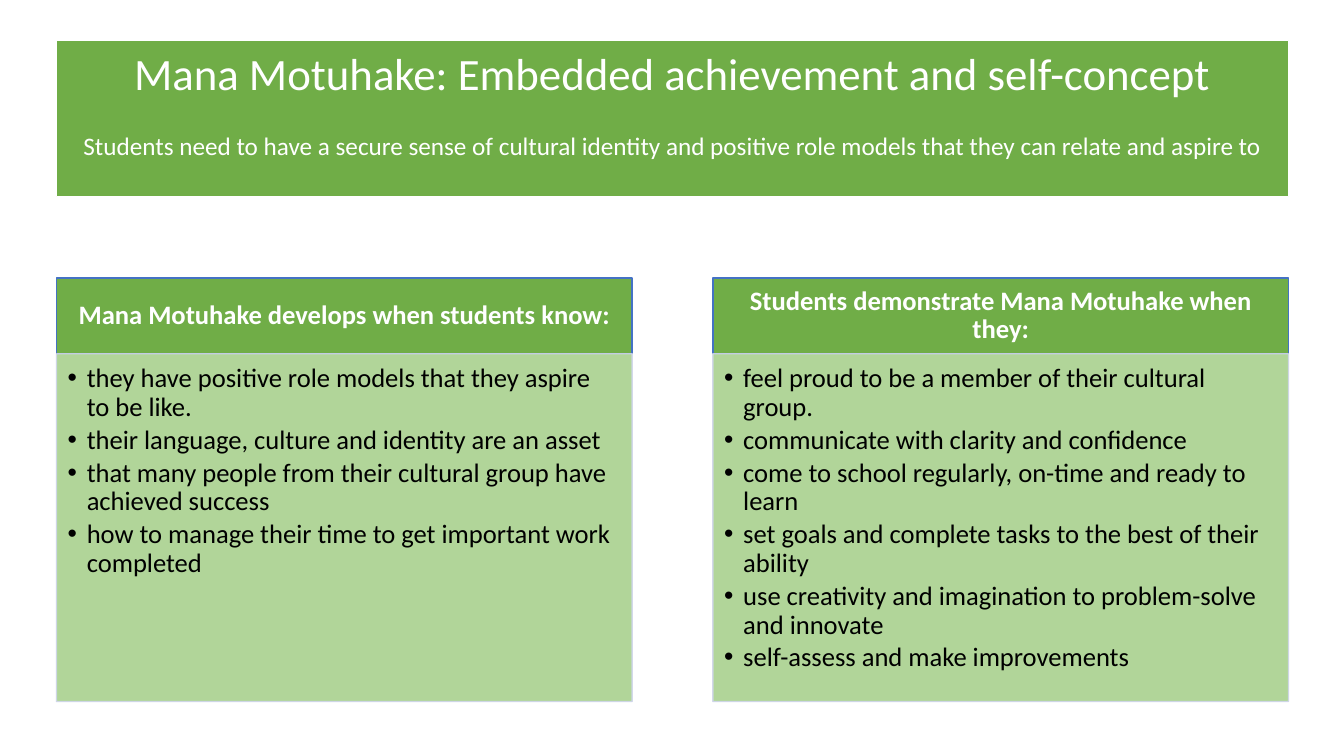
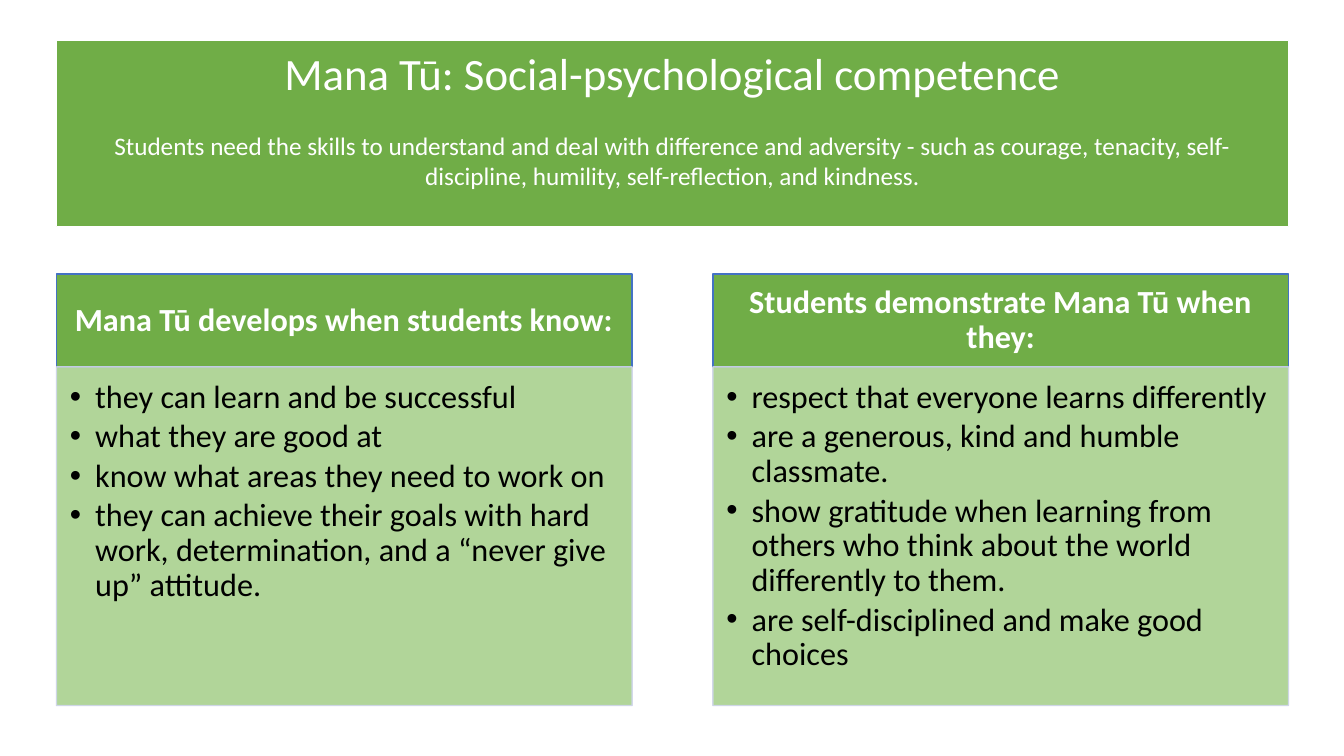
from dataclasses import dataclass

from lxml import etree
from pptx import Presentation
from pptx.dml.color import RGBColor
from pptx.enum import shapes, text
from pptx.oxml import ns
from pptx.util import Inches, Pt

# Content: panel sizes are in inches, text size in points
SLIDES = [
    {
        "title": "Mana Motuhake: Embedded achievement and self-concept",
        "subtitle": "Students need to have a secure sense of cultural identity and "
                    "positive role models that they can relate and aspire to",
        "band_height": 1.55,
        "top": 2.76, "head_height": 0.75, "body_height": 3.45,
        "size": 19, "indent": 0.19,
        "panels": [
            ("Mana Motuhake develops when students know:", [
                "they have positive role models that they aspire to be like.",
                "their language, culture and identity are an asset",
                "that many people from their cultural group have achieved success",
                "how to manage their time to get important work completed",
            ]),
            ("Students demonstrate Mana Motuhake when they:", [
                "feel proud to be a member of their cultural group.",
                "communicate with clarity and confidence",
                "come to school regularly, on-time and ready to learn",
                "set goals and complete tasks to the best of their ability",
                "use creativity and imagination to problem-solve and innovate",
                "self-assess and make improvements",
            ]),
        ],
    },
    {
        "title": "Mana Tū: Social-psychological competence",
        "subtitle": "Students need the skills to understand and deal with difference "
                    "and adversity - such as courage, tenacity, self-discipline, "
                    "humility, self-reflection, and kindness.",
        "band_height": 1.85,
        "top": 2.72, "head_height": 0.92, "body_height": 3.36,
        "size": 23, "indent": 0.25,
        "panels": [
            ("Mana Tū develops when students know:", [
                "they can learn and be successful",
                "what they are good at",
                "know what areas they need to work on",
                "they can achieve their goals with hard work, determination, "
                "and a “never give up” attitude.",
            ]),
            ("Students demonstrate Mana Tū when they:", [
                "respect that everyone learns differently",
                "are a generous, kind and humble classmate.",
                "show gratitude when learning from others who think about the "
                "world differently to them.",
                "are self-disciplined and make good choices",
            ]),
        ],
    },
]


# Shared look
@dataclass(frozen=True)
class Theme:
    font: str = "Calibri"
    green: str = "70AD47"
    pale_green: str = "A9D18E"
    blue: str = "4472C4"
    pale_blue: str = "CFD5EA"
    white: str = "FFFFFF"
    black: str = "000000"
    title_size: int = 32
    subtitle_size: int = 18
    panel_opacity: int = 90


THEME = Theme()
MARGIN, BAND_TOP = 0.56, 0.4
PANEL_WIDTH, PANEL_GAP = 5.71, 0.8
BAND_WIDTH = 2 * PANEL_WIDTH + PANEL_GAP

# Insets as fractions of the text size: left, top, right, bottom
HEAD_INSETS = (0.56, 0.32, 0.56, 0.32)
BODY_INSETS = (0.42, 0.42, 0.56, 0.63)


def set_opacity(fill, percent):
    color = fill._xPr.find(".//" + ns.qn("a:srgbClr"))
    etree.SubElement(color, ns.qn("a:alpha"), val=str(percent * 1000))


def add_box(slide, left, top, width, height, fill, line, line_width, opacity=100):
    s = slide.shapes.add_shape(shapes.MSO_SHAPE.RECTANGLE, Inches(left),
                               Inches(top), Inches(width), Inches(height))
    s.shadow.inherit = False
    s.fill.solid()
    s.fill.fore_color.rgb = RGBColor.from_string(fill)
    s.line.color.rgb = RGBColor.from_string(line)
    s.line.width = Pt(line_width)
    if opacity < 100:
        set_opacity(s.fill, opacity)
        set_opacity(s.line.fill, opacity)
    s.text_frame.word_wrap = True
    s.text_frame.vertical_anchor = text.MSO_ANCHOR.TOP
    return s.text_frame


def set_insets(tf, fractions, size):
    left, top, right, bottom = (Pt(f * size) for f in fractions)
    tf.margin_left, tf.margin_top = left, top
    tf.margin_right, tf.margin_bottom = right, bottom


def format_paragraph(p, size, color, align=text.PP_ALIGN.CENTER, bold=False):
    p.alignment = align
    for r in p.runs:
        r.font.name, r.font.size, r.font.bold = THEME.font, Pt(size), bold
        r.font.color.rgb = RGBColor.from_string(color)


def add_bullet(p, indent):
    pPr = p._p.get_or_add_pPr()
    pPr.set("marL", str(Inches(indent)))
    pPr.set("indent", str(-Inches(indent)))
    etree.SubElement(pPr, ns.qn("a:buFont"), typeface="Arial")
    etree.SubElement(pPr, ns.qn("a:buChar"), char="•")


def add_title_band(slide, data):
    tf = add_box(slide, MARGIN, BAND_TOP, BAND_WIDTH, data["band_height"],
                 THEME.green, THEME.white, 0.75)
    tf.text = data["title"]
    format_paragraph(tf.paragraphs[0], THEME.title_size, THEME.white)
    p = tf.add_paragraph()
    p.text = data["subtitle"]
    p.space_before = Pt(22)
    format_paragraph(p, THEME.subtitle_size, THEME.white)


def add_panel(slide, data, left, heading, bullets):
    size = data["size"]
    # Heading
    tf = add_box(slide, left, data["top"], PANEL_WIDTH, data["head_height"],
                 THEME.green, THEME.blue, 1)
    tf.vertical_anchor = text.MSO_ANCHOR.MIDDLE
    set_insets(tf, HEAD_INSETS, size)
    tf.text = heading
    tf.paragraphs[0].line_spacing = 0.9
    format_paragraph(tf.paragraphs[0], size, THEME.white, bold=True)

    # Bullet list
    tf = add_box(slide, left, data["top"] + data["head_height"], PANEL_WIDTH,
                 data["body_height"], THEME.pale_green, THEME.pale_blue, 1,
                 THEME.panel_opacity)
    set_insets(tf, BODY_INSETS, size)
    tf.text = "\n".join(bullets)
    for p in tf.paragraphs:
        add_bullet(p, data["indent"])
        p.line_spacing = 0.9
        p.space_after = Pt(round(0.15 * size, 1))
        format_paragraph(p, size, THEME.black, text.PP_ALIGN.LEFT)


def main():
    prs = Presentation()
    prs.slide_width, prs.slide_height = Inches(13.33), Inches(7.5)
    for data in SLIDES:
        slide = prs.slides.add_slide(prs.slide_layouts[6])
        for i, (heading, bullets) in enumerate(data["panels"]):
            left = MARGIN + i * (PANEL_WIDTH + PANEL_GAP)
            add_panel(slide, data, left, heading, bullets)
        add_title_band(slide, data)
    prs.save("out.pptx")


if __name__ == "__main__":
    main()
